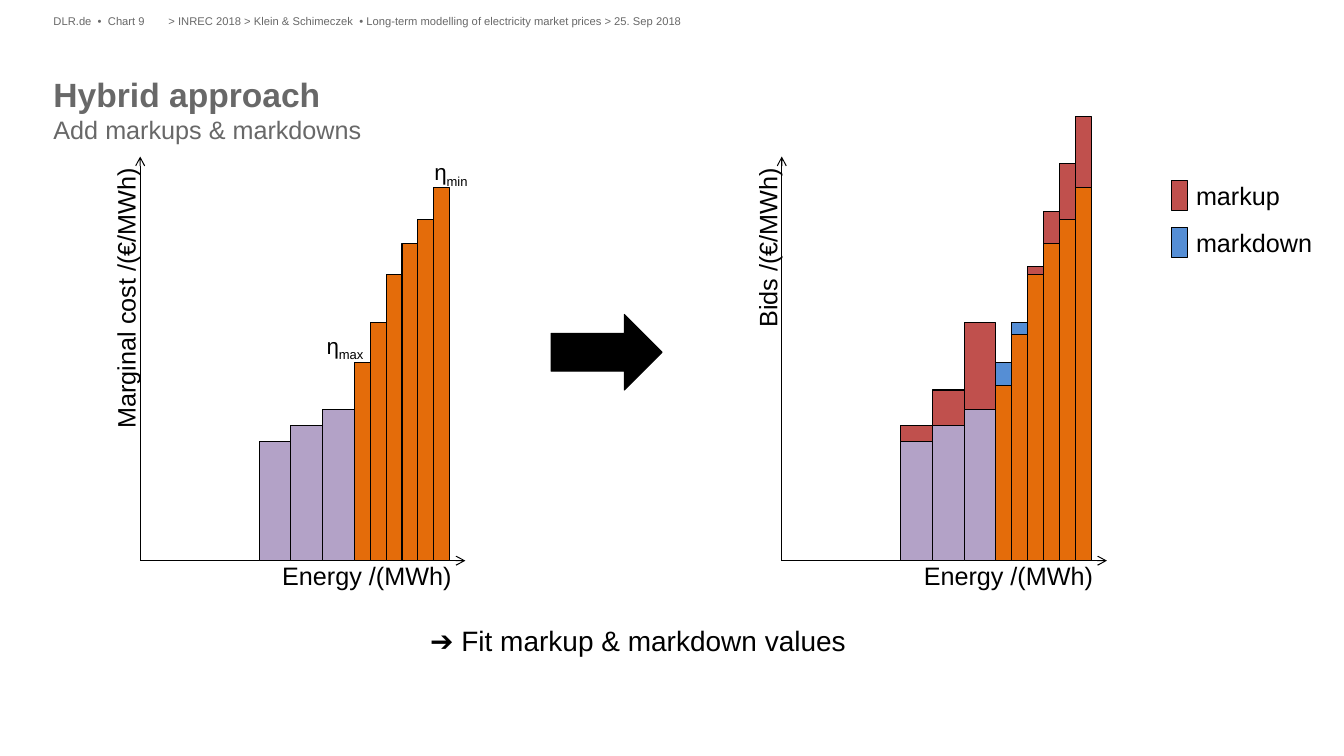
from lxml.etree import SubElement
from pptx import Presentation
from pptx.dml.color import RGBColor
from pptx.enum.shapes import MSO_CONNECTOR, MSO_SHAPE
from pptx.enum.text import MSO_ANCHOR, PP_ALIGN
from pptx.oxml.ns import qn
from pptx.util import Pt

BLACK, GREY = "000000", "686868"
PURPLE, ORANGE, RED, BLUE = "B3A2C7", "E46C0A", "C0504D", "558ED5"
UNIT = 2.835
PLANTS = [
    (8, 30, PURPLE, 4),
    (8, 34, PURPLE, 9),
    (8, 38, PURPLE, 22),
    (4, 50, ORANGE, -6),
    (4, 60, ORANGE, -3),
    (4, 72, ORANGE, 2),
    (4, 80, ORANGE, 8),
    (4, 86, ORANGE, 14),
    (4, 94, ORANGE, 18),
]


def rgb(color):
    return RGBColor.from_string(color)


def add_run(p, text, size=18, color=BLACK, bold=False, baseline=None):
    r = p.add_run()
    r.text = text
    r.font.name = "Arial"
    r.font.size = Pt(size)
    r.font.bold = bold
    r.font.color.rgb = rgb(color)
    if baseline:
        r.font._element.set("baseline", str(baseline))


def clear_margins(tf):
    tf.margin_left = tf.margin_right = tf.margin_top = tf.margin_bottom = 0
    tf.vertical_anchor = MSO_ANCHOR.TOP


def add_text(s, x, y, w, h, text, sub=None, align=PP_ALIGN.LEFT,
             wrap=True, rotation=0, **fmt):
    sp = s.shapes.add_textbox(Pt(x), Pt(y), Pt(w), Pt(h))
    sp.rotation = rotation
    tf = sp.text_frame
    clear_margins(tf)
    tf.word_wrap = wrap
    p = tf.paragraphs[0]
    p.alignment = align
    add_run(p, text, **fmt)
    if sub:
        add_run(p, sub, baseline=-25000, **fmt)


def add_box(s, x, y, w, h, fill, kind=MSO_SHAPE.RECTANGLE):
    sp = s.shapes.add_shape(kind, Pt(x), Pt(y), Pt(w), Pt(h))
    sp.shadow.inherit = False
    sp.fill.solid()
    sp.fill.fore_color.rgb = rgb(fill)
    sp.line.color.rgb = rgb(BLACK)
    sp.line.width = Pt(0.75)


def add_axis(s, x1, y1, x2, y2):
    cx = s.shapes.add_connector(MSO_CONNECTOR.STRAIGHT, Pt(x1), Pt(y1), Pt(x2), Pt(y2))
    cx.line.color.rgb = rgb(BLACK)
    cx.line.width = Pt(0.75)
    SubElement(cx.line._get_or_add_ln(), qn("a:tailEnd"), type="arrow")
    SubElement(cx._element.spPr, qn("a:effectLst"))


def add_header(s, x, y, w, h):
    add_text(s, x, y, 82, h, "DLR.de  •  Chart 9", size=8, color=GREY)
    add_text(s, x + 82.2, y, w - 82.2, h,
             "> INREC 2018 > Klein & Schimeczek  • Long-term modelling of "
             "electricity market prices > 25. Sep 2018", size=8, color=GREY)


def add_title(s, x, y, w, h):
    sp = s.shapes.title
    sp.left, sp.top, sp.width, sp.height = Pt(x), Pt(y), Pt(w), Pt(h)
    tf = sp.text_frame
    clear_margins(tf)
    tf.word_wrap = True
    p = tf.paragraphs[0]
    p.alignment = PP_ALIGN.LEFT
    add_run(p, "Hybrid approach", size=24, color=GREY, bold=True)
    p.add_line_break()
    add_run(p, "Add markups & markdowns", color=GREY)


def add_merit_order(s, x, y, w, h, y_label, bids=False):
    base = y + h
    add_axis(s, x, base, x + w, base)
    add_axis(s, x, base, x, y)
    left = x + 30 * UNIT
    for width, cost, color, change in PLANTS:
        bar_w, bar_h = width * UNIT, cost * UNIT
        add_box(s, left, base - bar_h, bar_w, bar_h, color)
        if bids:
            top = cost + max(change, 0)
            add_box(s, left, base - top * UNIT, bar_w, abs(change) * UNIT,
                    RED if change > 0 else BLUE)
        left += bar_w
    label_w, label_h = 226.8, 21.6
    add_text(s, x - 10.4 - label_w / 2, y + 8.3 + (label_w - label_h) / 2,
             label_w, label_h, y_label, align=PP_ALIGN.RIGHT, rotation=270)
    add_text(s, x + 101.5, base, 122.4, label_h, "Energy /(MWh)", wrap=False)


def add_efficiency_labels(s, x, y):
    add_text(s, x + 133.2, y + 125.3, 31, 19.4, "ƞ", sub="max", size=16)
    add_text(s, x + 210.2, y + 1.4, 31, 19.4, "ƞ", sub="min", size=16)


def add_legend(s, x, y, w, h):
    row_h = 21.6
    for i, (name, color) in enumerate([("markup", RED), ("markdown", BLUE)]):
        top = y + i * (h - row_h)
        add_box(s, x, top, 4 * UNIT, row_h, color)
        add_text(s, x + 17.3, top, w - 17.3, row_h, name, wrap=False)


def main():
    prs = Presentation()
    prs.slide_width, prs.slide_height = Pt(960.48), Pt(540)
    s = prs.slides.add_slide(prs.slide_layouts[5])
    add_title(s, 38.2, 53, 237.6, 58.3)
    add_header(s, 38.2, 10.1, 883.4, 11.5)
    add_merit_order(s, 100.2, 111.8, 232.4, 288.7, "Marginal cost /(€/MWh)")
    add_efficiency_labels(s, 100.2, 111.8)
    add_box(s, 393.8, 224.6, 79.4, 54, BLACK, kind=MSO_SHAPE.RIGHT_ARROW)
    add_merit_order(s, 558.7, 111.8, 232.4, 288.7, "Bids /(€/MWh)", bids=True)
    add_legend(s, 837.5, 128.7, 100.8, 55.2)
    add_text(s, 230.4, 445.7, 451.4, 24.5, "➔ Fit markup & markdown values",
             size=20, align=PP_ALIGN.CENTER)
    prs.save("out.pptx")


if __name__ == "__main__":
    main()
